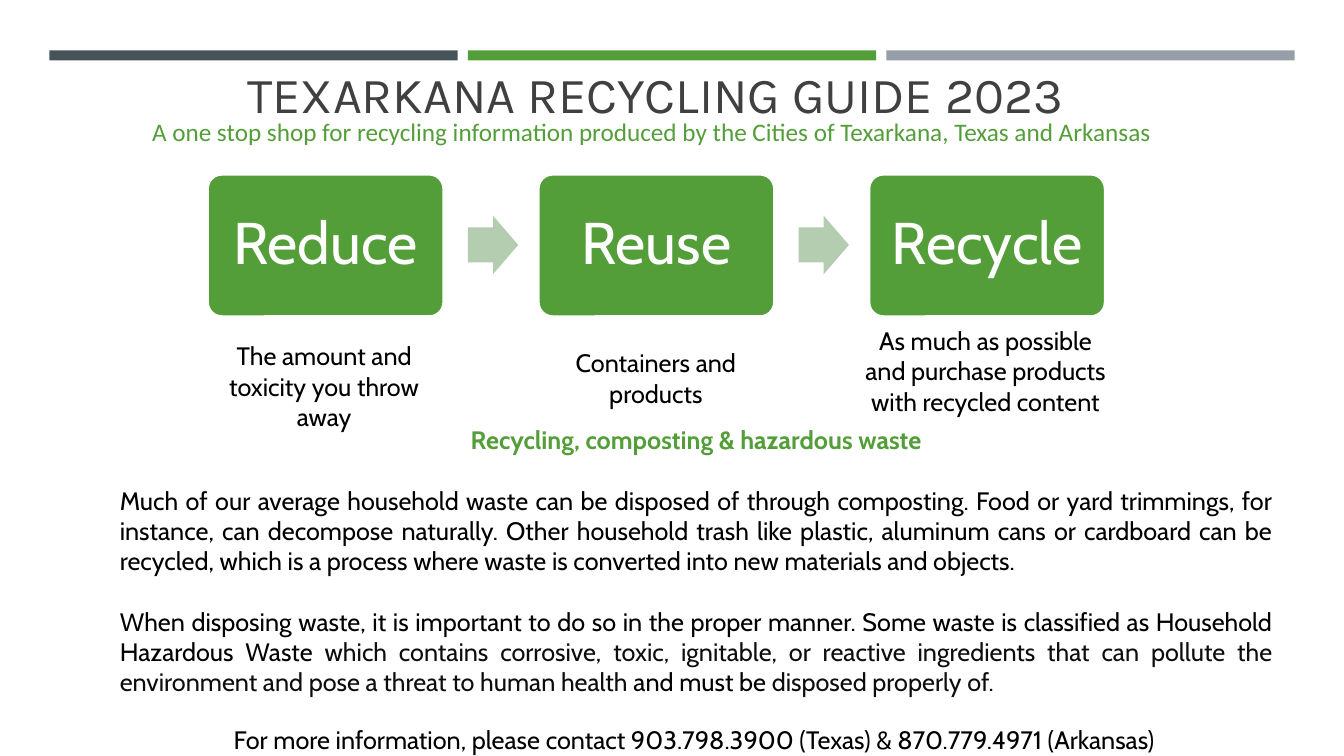
from pptx import Presentation
from pptx.dml.color import RGBColor
from pptx.enum.shapes import MSO_SHAPE
from pptx.enum.text import MSO_ANCHOR, PP_ALIGN
from pptx.util import Inches, Pt

GREEN, BLACK, WHITE, INK = "549E39", "000000", "FFFFFF", "0D0D0D"
STEPS = [
    ("Reduce", "The amount and toxicity you throw away", 1.9, 3.33, 2.63, 0.71),
    ("Reuse", "Containers and products", 5.19, 3.4, 2.63, 0.71),
    ("Recycle", "As much as possible and purchase products with recycled content",
     8.41, 3.18, 2.73, 1.01),
]
WASTE = [
    [("Much of our average household waste can be disposed of through composting. "
      "Food or yard trimmings, for instance, can decompose naturally. Other household "
      "trash like plastic, aluminum cans or cardboard can be recycled, which is a "
      "process where waste is converted into new materials and objects. ", BLACK)],
    [("When disposing waste, it is important to do so in the proper manner. "
      "Some waste is classified as Household Hazardous Waste ", BLACK),
     ("which contains corrosive, toxic, ignitable, or reactive ingredients that can "
      "pollute the environment and pose a threat to human health ", INK),
     ("and must be ", BLACK),
     ("disposed properly of. ", INK)],
]


def paint(code):
    return RGBColor.from_string(code)


class Guide:
    def __init__(self, deck):
        self.slide = deck.slides.add_slide(deck.slide_layouts[6])
        self.face = "Cabin"
        self.size = 18

    def style(self, run, color, size=None, face=None, bold=False):
        font = run.font
        font.name = face or self.face
        font.size = Pt(size or self.size)
        font.bold = bold
        font.color.rgb = paint(color)

    def shape(self, kind, left, top, width, height, fill, line=None):
        shape = self.slide.shapes.add_shape(
            kind, Inches(left), Inches(top), Inches(width), Inches(height))
        shape.shadow.inherit = False
        shape.fill.solid()
        shape.fill.fore_color.rgb = paint(fill)
        if line:
            shape.line.color.rgb = paint(line)
            shape.line.width = Pt(1.75)
        else:
            shape.line.fill.background()
        return shape

    def card(self, left, word):
        card = self.shape(MSO_SHAPE.ROUNDED_RECTANGLE, left, 1.73, 2.34, 1.41, GREEN, WHITE)
        card.adjustments[0] = 0.1
        frame = card.text_frame
        frame.text = word
        frame.word_wrap = False
        frame.vertical_anchor = MSO_ANCHOR.MIDDLE
        para = frame.paragraphs[0]
        para.alignment = PP_ALIGN.CENTER
        para.line_spacing = 0.9
        self.style(para.runs[0], WHITE, 42)

    def arrow(self, left):
        arrow = self.shape(MSO_SHAPE.RIGHT_ARROW, left, 2.14, 0.5, 0.58, "B4CCAF")
        arrow.adjustments[0] = 0.6
        arrow.adjustments[1] = 0.5

    def text(self, left, top, width, height, words, color=BLACK,
             align=PP_ALIGN.LEFT, anchor=MSO_ANCHOR.TOP, **look):
        box = self.slide.shapes.add_textbox(
            Inches(left), Inches(top), Inches(width), Inches(height))
        frame = box.text_frame
        frame.text = words
        frame.word_wrap = True
        frame.vertical_anchor = anchor
        para = frame.paragraphs[0]
        para.alignment = align
        self.style(para.runs[0], color, **look)
        return frame

    def prose(self, frame, parts):
        para = frame.add_paragraph()
        para.alignment = PP_ALIGN.JUSTIFY
        para.space_before = Pt(21.8)
        for words, color in parts:
            run = para.add_run()
            run.text = words
            self.style(run, color)


def main():
    deck = Presentation()
    deck.slide_width, deck.slide_height = Inches(13.33), Inches(7.5)
    guide = Guide(deck)

    guide.shape(MSO_SHAPE.RECTANGLE, 0, 0, 13.33, 7.5, WHITE)
    guide.text(0.49, -0.33, 12.02, 1.61, "TEXARKANA RECYCLING GUIDE 2023", "404040",
               PP_ALIGN.CENTER, MSO_ANCHOR.BOTTOM, size=36, face="Karla")
    for i, color in enumerate(["465359", GREEN, "969FA7"]):
        guide.shape(MSO_SHAPE.RECTANGLE, 0.49 + 4.15 * i, 0.5, 4.05, 0.1, color)
    guide.text(1.41, 1.1, 10.97, 0.4,
               "A one stop shop for recycling information produced by the Cities of "
               "Texarkana, Texas and Arkansas", GREEN, face="Calibri")

    for i, (word, note, left, top, width, height) in enumerate(STEPS):
        start = 2.06 + 3.28 * i
        guide.card(start, word)
        if i < len(STEPS) - 1:
            guide.arrow(start + 2.58)
        guide.text(left, top, width, height, note, align=PP_ALIGN.CENTER)

    guide.text(2.22, 7.14, 10.93, 0.4,
               "For more information, please contact 903.798.3900 (Texas) & "
               "870.779.4971 (Arkansas)")
    frame = guide.text(1.09, 4.16, 11.63, 3.13, "Recycling, composting & hazardous waste",
                       GREEN, PP_ALIGN.CENTER, bold=True)
    for parts in WASTE:
        guide.prose(frame, parts)
    deck.save("out.pptx")


if __name__ == "__main__":
    main()
